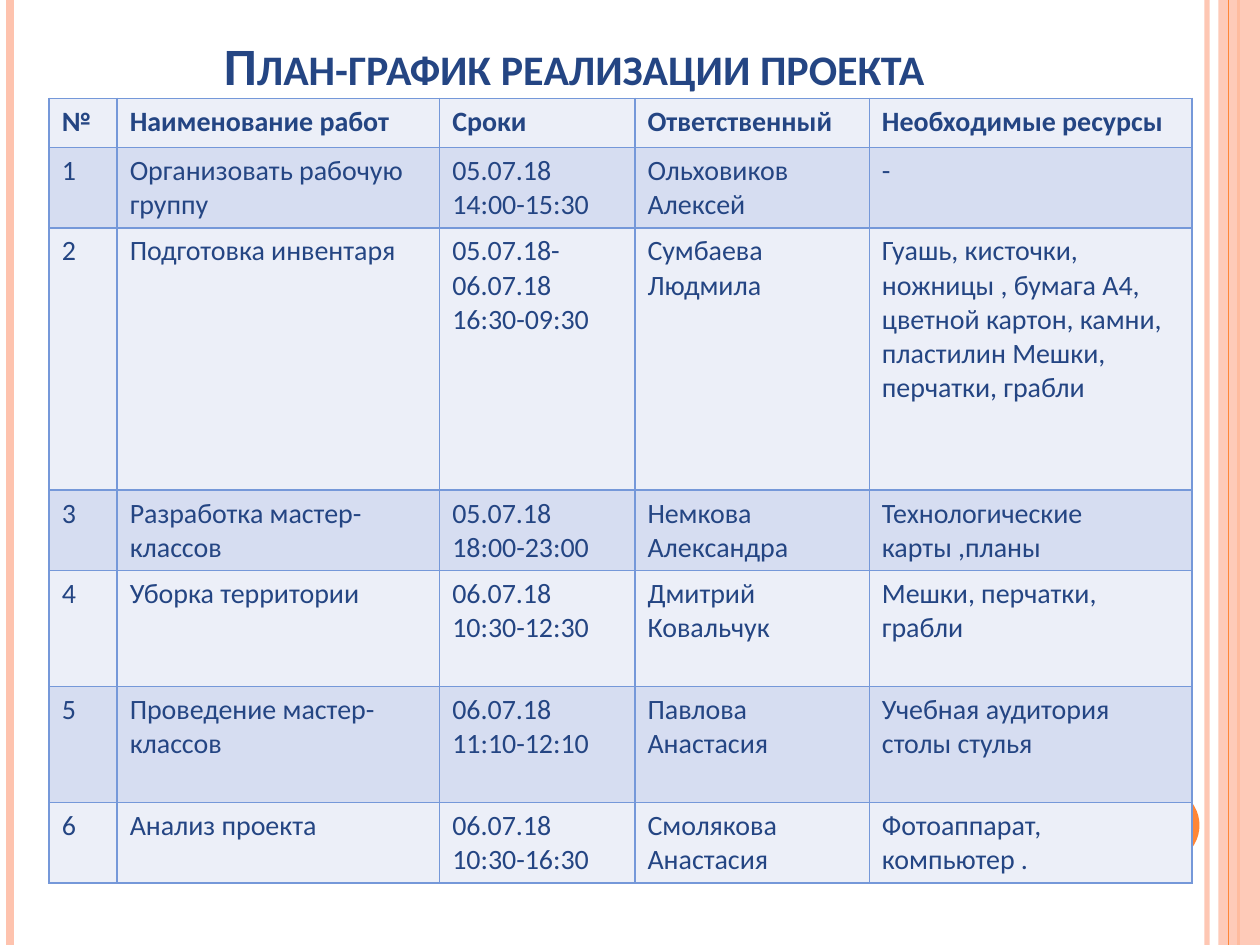
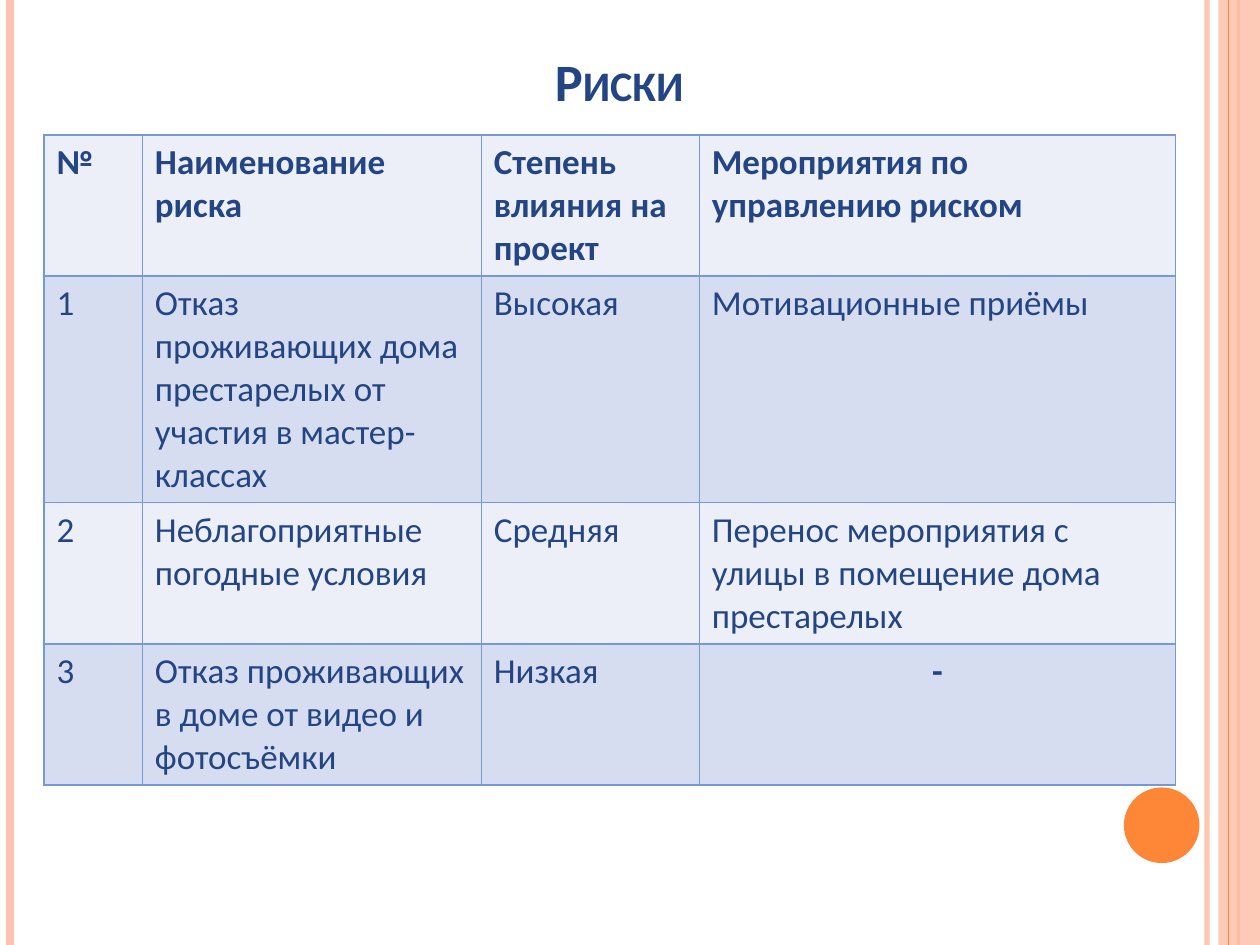
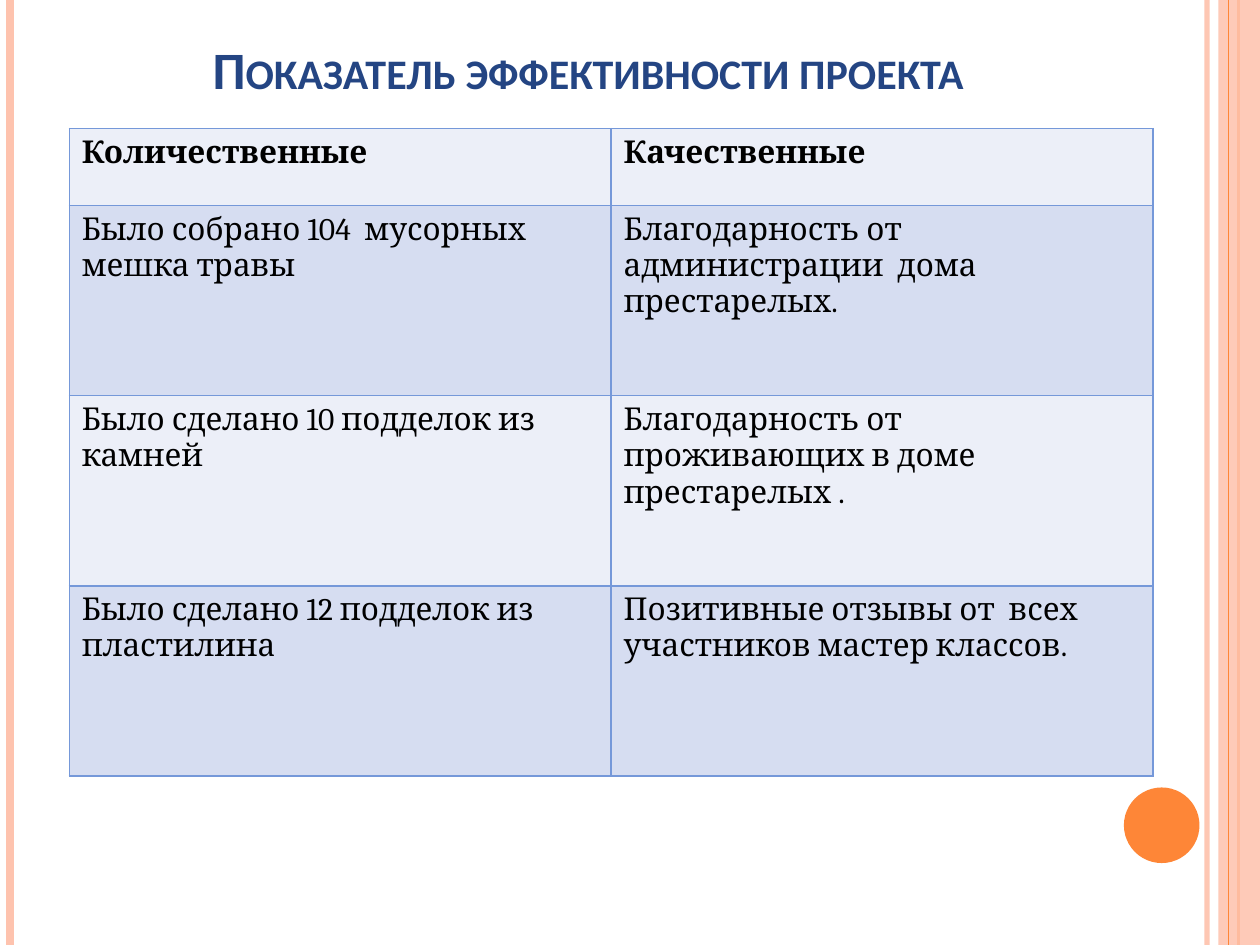
from lxml import etree
from pptx import Presentation
from pptx.dml.color import RGBColor
from pptx.enum.shapes import MSO_CONNECTOR, MSO_SHAPE
from pptx.enum.text import MSO_ANCHOR, PP_ALIGN
from pptx.oxml.ns import qn
from pptx.util import Inches, Pt

STRAIGHT = MSO_CONNECTOR.STRAIGHT
RECTANGLE, OVAL = MSO_SHAPE.RECTANGLE, MSO_SHAPE.OVAL
BOTTOM = MSO_ANCHOR.BOTTOM
CENTER = PP_ALIGN.CENTER

COLORS = {
    "peach": "FEC3AE",
    "orange": "FE8637",
    "navy": "244583",
    "black": "000000",
    "border": "7598D9",
    "light_row": "ECEFF8",
    "dark_row": "D6DDF1",
}
SLIDE_WIDTH, SLIDE_HEIGHT = 10, 7.5
TITLE_WIDTH = 8.17

PLAN_ROWS = [
    ["№", "Наименование работ", "Сроки", "Ответственный", "Необходимые ресурсы"],
    ["1", "Организовать рабочую группу", "05.07.18\n14:00-15:30",
     "Ольховиков Алексей", "-"],
    ["2", "Подготовка инвентаря", "05.07.18-06.07.18\n16:30-09:30", "Сумбаева Людмила",
     "Гуашь, кисточки, ножницы , бумага А4, цветной картон, камни, "
     "пластилин Мешки, перчатки, грабли"],
    ["3", "Разработка мастер-классов", "05.07.18\n18:00-23:00",
     "Немкова Александра", "Технологические карты ,планы"],
    ["4", "Уборка территории", "06.07.18\n10:30-12:30",
     "Дмитрий Ковальчук", "Мешки, перчатки, грабли"],
    ["5", "Проведение мастер-классов", "06.07.18\n11:10-12:10",
     "Павлова Анастасия", "Учебная аудитория столы стулья"],
    ["6", "Анализ проекта", "06.07.18\n10:30-16:30",
     "Смолякова Анастасия", "Фотоаппарат, компьютер ."],
]
RISK_ROWS = [
    ["№", "Наименование риска", "Степень влияния на проект",
     "Мероприятия по управлению риском"],
    ["1", "Отказ  проживающих дома престарелых от участия в мастер-классах",
     "Высокая", "Мотивационные приёмы"],
    ["2", "Неблагоприятные погодные условия", "Средняя",
     "Перенос мероприятия с улицы в помещение дома престарелых"],
    ["3", "Отказ проживающих в доме от видео и фотосъёмки", "Низкая", "-"],
]
RESULT_ROWS = [
    ["Количественные", "Качественные"],
    ["Было собрано 104  мусорных мешка травы",
     "Благодарность от администрации  дома престарелых."],
    ["Было сделано 10 подделок из камней",
     "Благодарность от проживающих в доме престарелых ."],
    ["Было сделано 12 подделок из пластилина",
     "Позитивные отзывы от  всех участников мастер классов."],
]


def rgb(color):
    return RGBColor.from_string(COLORS[color])


def set_alpha(element, percent):
    color = element.find(".//" + qn("a:srgbClr"))
    etree.SubElement(color, qn("a:alpha"), val=str(percent * 1000))


class Deck:
    """Holds the shared style and the slide being built."""

    def __init__(self):
        self.presentation = Presentation()
        self.presentation.slide_width = Inches(SLIDE_WIDTH)
        self.presentation.slide_height = Inches(SLIDE_HEIGHT)
        self.slide = None

    def add_slide(self):
        self.slide = self.presentation.slides.add_slide(
            self.presentation.slide_layouts[6])
        # Side stripes and the page disc
        self.stripe(9.58, "peach", 3, alpha=93)
        self.stripe(0.08, "peach", 4.5)
        self.stripe(9.83, "orange", 1.5)
        self.shape(RECTANGLE, 9.67, 0, 0.33, SLIDE_HEIGHT, "peach", alpha=87)
        self.stripe(9.75, "orange", 0.75)
        self.shape(OVAL, 8.92, 6.25, 0.6, 0.6, "orange")

    def stripe(self, x, color, width, alpha=None):
        line = self.slide.shapes.add_connector(
            STRAIGHT, Inches(x), 0, Inches(x), Inches(SLIDE_HEIGHT))
        line.line.color.rgb = rgb(color)
        line.line.width = Pt(width)
        properties = line._element.spPr
        if alpha:
            set_alpha(properties, alpha)
        etree.SubElement(properties, qn("a:effectLst"))

    def shape(self, kind, left, top, width, height, color, alpha=None):
        shape = self.slide.shapes.add_shape(
            kind, Inches(left), Inches(top), Inches(width), Inches(height))
        shape.shadow.inherit = False
        shape.fill.solid()
        shape.fill.fore_color.rgb = rgb(color)
        shape.line.fill.background()
        if alpha:
            set_alpha(shape._element.spPr, alpha)

    def style(self, paragraph, font, size, color, bold):
        paragraph.font.name = font
        paragraph.font.size = Pt(size)
        paragraph.font.color.rgb = rgb(color)
        paragraph.font.bold = bold

    def title(self, text, left, top, height):
        box = self.slide.shapes.add_textbox(
            Inches(left), Inches(top), Inches(TITLE_WIDTH), Inches(height))
        frame = box.text_frame
        frame.word_wrap = True
        frame.vertical_anchor = BOTTOM
        paragraph = frame.paragraphs[0]
        paragraph.text = text
        paragraph.alignment = CENTER
        self.style(paragraph, "Calibri", 30, "navy", True)
        paragraph._p.pPr.find(qn("a:defRPr")).set("cap", "small")

    def table(self, rows, left, top, widths, heights, size, font="Calibri", color="navy"):
        table = self.slide.shapes.add_table(
            len(rows), len(widths), Inches(left), Inches(top),
            Inches(sum(widths)), Inches(sum(heights))).table
        table.first_row = table.horz_banding = False
        for column, width in zip(table.columns, widths):
            column.width = Inches(width)
        for index, (row, height, texts) in enumerate(zip(table.rows, heights, rows)):
            row.height = Inches(height)
            for cell, text in zip(row.cells, texts):
                cell.text = text
                for paragraph in cell.text_frame.paragraphs:
                    self.style(paragraph, font, size, color, index == 0)
                self.borders(cell)
                cell.fill.solid()
                cell.fill.fore_color.rgb = rgb("dark_row" if index % 2 else "light_row")
        return table

    def borders(self, cell):
        properties = cell._tc.get_or_add_tcPr()
        for side in ("lnL", "lnR", "lnT", "lnB"):
            line = etree.SubElement(properties, qn("a:" + side), w=str(Pt(1)))
            fill = etree.SubElement(line, qn("a:solidFill"))
            etree.SubElement(fill, qn("a:srgbClr"), val=COLORS["border"])


def main():
    deck = Deck()

    # Schedule
    deck.add_slide()
    deck.title("План-график реализации проекта ", 0.51, 0, 0.81)
    deck.table(PLAN_ROWS, 0.39, 0.78, [0.54, 2.56, 1.55, 1.86, 2.56],
               [0.39, 0.64, 2.08, 0.64, 0.92, 0.92, 0.64], 16)

    # Risks
    deck.add_slide()
    deck.title("Риски", 0.83, 0.29, 0.65)
    risks = deck.table(RISK_ROWS, 0.35, 1.07, [0.78, 2.69, 1.73, 3.78],
                       [1.12, 1.8, 1.12, 1.12], 20)
    no_action = risks.cell(3, 3).text_frame.paragraphs[0]
    no_action.alignment = CENTER
    no_action.font.bold = True

    # Results
    deck.add_slide()
    deck.title("Показатель эффективности проекта ", 0.62, 0.23, 0.61)
    deck.table(RESULT_ROWS, 0.55, 1.02, [4.3] * 2, [0.61] + [1.51] * 3, 18,
               font="Cambria", color="black")

    deck.presentation.save("out.pptx")


if __name__ == "__main__":
    main()
